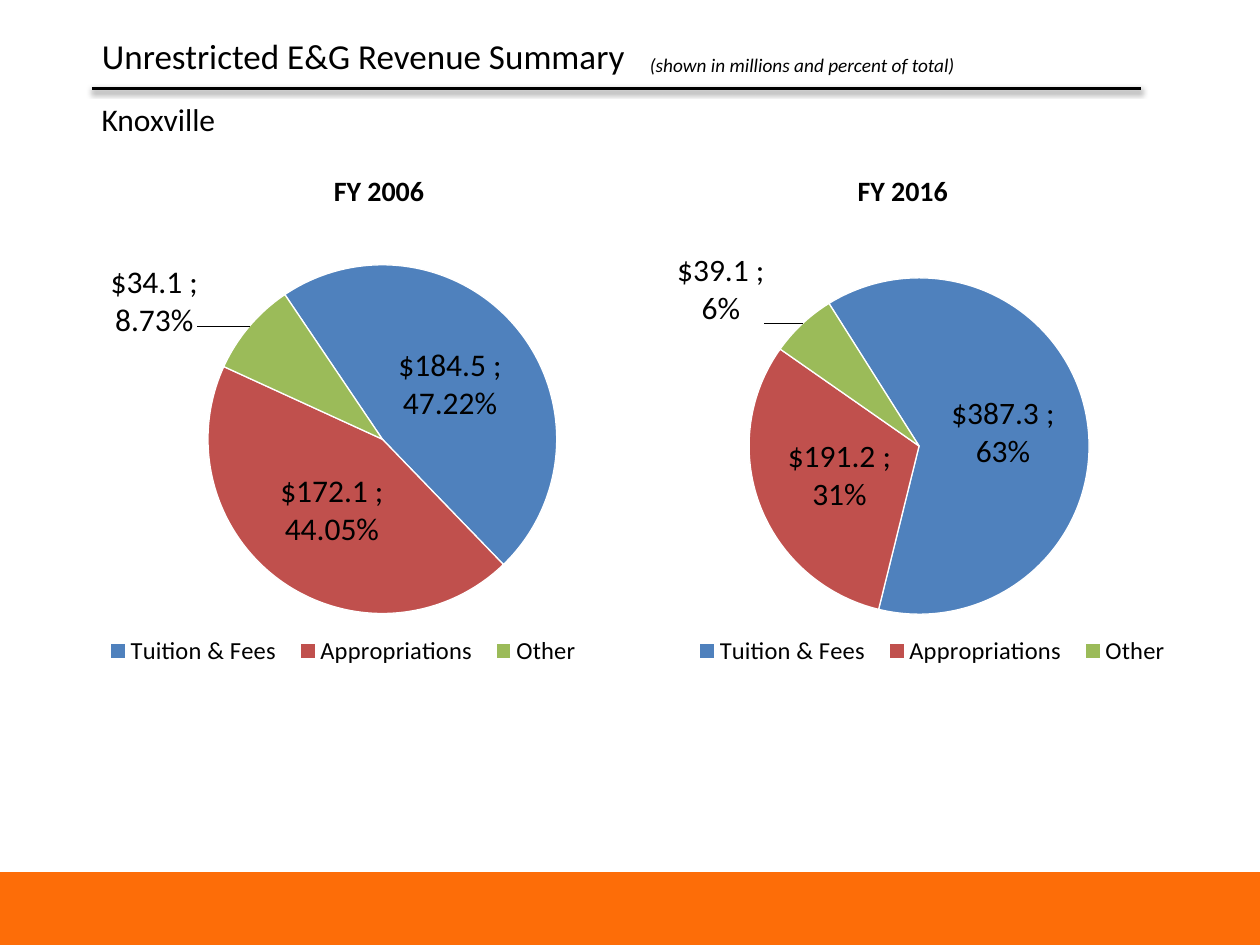
from copy import deepcopy

from lxml import etree
from pptx import Presentation
from pptx.chart.data import CategoryChartData
from pptx.dml.color import RGBColor
from pptx.enum.chart import XL_CHART_TYPE, XL_LABEL_POSITION, XL_LEGEND_POSITION
from pptx.enum.shapes import MSO_CONNECTOR, MSO_SHAPE
from pptx.enum.text import MSO_ANCHOR, PP_ALIGN
from pptx.oxml import parse_xml
from pptx.oxml.ns import nsdecls, qn
from pptx.util import Cm, Pt

PIE = XL_CHART_TYPE.PIE
CENTER, OUTSIDE = XL_LABEL_POSITION.CENTER, XL_LABEL_POSITION.OUTSIDE_END
BOTTOM = XL_LEGEND_POSITION.BOTTOM

THEME = {
    "font": "Calibri",
    "text": RGBColor(0, 0, 0),
    "gap": RGBColor(255, 255, 255),
    "band": RGBColor(0xFD, 0x6D, 0x08),
    "slices": [RGBColor.from_string(c) for c in ("4F81BD", "C0504D", "9BBB59")],
    "title": Pt(20), "campus": Pt(18), "year": Pt(16), "note": Pt(11),
    "label": Pt(18), "legend": Pt(14),
}

TITLE = "Unrestricted E&G Revenue Summary"
NOTE = "(shown in millions and percent of total)"
CAMPUS = "Knoxville"
SOURCES = ["Tuition & Fees", "Appropriations", "Other"]
DOLLARS = '"$"#,##0.0_)'

# Layout entries are fractions of the chart: left, top, width, height.
YEARS = [
    {"year": "FY 2006", "year_left": 6.48, "left": 0.46, "revenue": (184.5, 172.1, 34.1),
     "percent": "0.00%", "start": 326, "plot": (0.28, 0.05, 0.54, 0.8),
     "legend": (0.11, 0.89, 0.76, 0.09), "other_shift": (-0.07, 0.04)},
    {"year": "FY 2016", "year_left": 17.04, "left": 11.28, "revenue": (387.3, 191.2, 39.1),
     "percent": "0%", "start": 328, "plot": (0.28, 0.07, 0.54, 0.78),
     "legend": (0.19, 0.89, 0.76, 0.09), "other_shift": (-0.05, 0.02)},
]


def style(font, size, bold=False, italic=False):
    font.name, font.size, font.bold, font.italic = THEME["font"], size, bold, italic
    font.color.rgb = THEME["text"]


def write(shape, text, size, wrap=True, **emphasis):
    frame = shape.text_frame
    frame.word_wrap = wrap
    frame.vertical_anchor = MSO_ANCHOR.TOP
    frame.text = text
    paragraph = frame.paragraphs[0]
    paragraph.alignment = PP_ALIGN.LEFT
    style(paragraph.font, size, **emphasis)


def add_text(slide, box, text, size, **options):
    write(slide.shapes.add_textbox(*map(Cm, box)), text, size, **options)


def manual_layout(fractions, inner=False):
    """Two fractions shift an element; four set its place and size."""
    fields = [("layoutTarget", "inner")] if inner else []
    if len(fractions) == 4:
        fields += [("xMode", "edge"), ("yMode", "edge")]
    fields += zip("xywh", fractions)
    body = "".join(f'<c:{tag} val="{value}"/>' for tag, value in fields)
    return parse_xml(f'<c:layout {nsdecls("c")}><c:manualLayout>{body}</c:manualLayout></c:layout>')


def label_slices(series, percent, other_shift):
    labels = series.data_labels
    labels.show_value = labels.show_percentage = True
    labels.number_format, labels.number_format_is_linked = percent, False
    labels.position = OUTSIDE
    style(labels.font, THEME["label"])
    group = series._element.find(qn("c:dLbls"))
    separator = etree.Element(qn("c:separator"))
    separator.text = ";\n"
    group.find(qn("c:showBubbleSize")).addnext(separator)

    other = etree.Element(qn("c:dLbl"))
    etree.SubElement(other, qn("c:idx")).set("val", str(len(SOURCES) - 1))
    other.append(manual_layout(other_shift))
    for part in group:
        if part.tag != qn("c:showLeaderLines"):
            other.append(deepcopy(part))
    labels.position = CENTER
    group.insert(0, other)


def add_pie(slide, year):
    data = CategoryChartData(number_format=DOLLARS)
    data.categories = SOURCES
    data.add_series("Series 1", year["revenue"])
    chart = slide.shapes.add_chart(
        PIE, Cm(year["left"]), Cm(4.9), Cm(13.18), Cm(8.79), data).chart
    chart.has_title = False
    style(chart.font, THEME["label"])

    chart.has_legend = True
    legend = chart.legend
    legend.position, legend.include_in_layout = BOTTOM, False
    style(legend.font, THEME["legend"])
    legend._element.find(qn("c:legendPos")).addnext(manual_layout(year["legend"]))

    pie = chart.plots[0]
    pie.vary_by_categories = True
    series = pie.series[0]
    for index, color in enumerate(THEME["slices"]):
        slice_format = series.points[index].format
        slice_format.fill.solid()
        slice_format.fill.fore_color.rgb = color
        slice_format.line.color.rgb = THEME["gap"]
        slice_format.line.width = Pt(0.75)
    label_slices(series, year["percent"], year["other_shift"])

    pie_xml = pie._element
    for old in pie_xml.findall(qn("c:firstSliceAng")):
        pie_xml.remove(old)
    etree.SubElement(pie_xml, qn("c:firstSliceAng")).set("val", str(year["start"]))
    area = pie_xml.getparent()
    for old in area.findall(qn("c:layout")):
        area.remove(old)
    area.insert(0, manual_layout(year["plot"], inner=True))


def add_band(slide):
    band = slide.shapes.add_shape(MSO_SHAPE.RECTANGLE, 0, Cm(17.58), Cm(25.4), Cm(1.47))
    band.shadow.inherit = False
    band.fill.solid()
    band.fill.fore_color.rgb = THEME["band"]
    band.line.fill.background()


def add_title_rule(slide):
    rule = slide.shapes.add_connector(MSO_CONNECTOR.STRAIGHT, Cm(1.85), Cm(1.78), Cm(23.01), Cm(1.78))
    rule.line.color.rgb = THEME["text"]
    rule.line.width = Pt(2)
    rule._element.spPr.append(parse_xml(
        f'<a:effectLst {nsdecls("a")}>'
        f'<a:outerShdw blurRad="{Pt(3.1)}" dist="{Pt(1.6)}" dir="5400000" rotWithShape="0">'
        '<a:srgbClr val="000000"><a:alpha val="38000"/></a:srgbClr>'
        '</a:outerShdw></a:effectLst>'))


def main():
    deck = Presentation()
    deck.slide_width, deck.slide_height = Cm(25.4), Cm(19.05)
    slide = deck.slides.add_slide(deck.slide_layouts[5])
    add_band(slide)
    add_title_rule(slide)
    title = slide.shapes.title
    title.left, title.top, title.width, title.height = map(Cm, (1.8, 0.56, 13.51, 1.12))
    write(title, TITLE, THEME["title"])
    for year in YEARS:
        add_text(slide, (year["year_left"], 3.38, 2.36, 0.94), year["year"],
                 THEME["year"], wrap=False, bold=True)
        add_pie(slide, year)
    add_text(slide, (12.85, 0.94, 10.62, 0.74), NOTE, THEME["note"], italic=True)
    add_text(slide, (1.8, 1.9, 4.57, 1.02), CAMPUS, THEME["campus"])
    deck.save("out.pptx")


if __name__ == "__main__":
    main()
